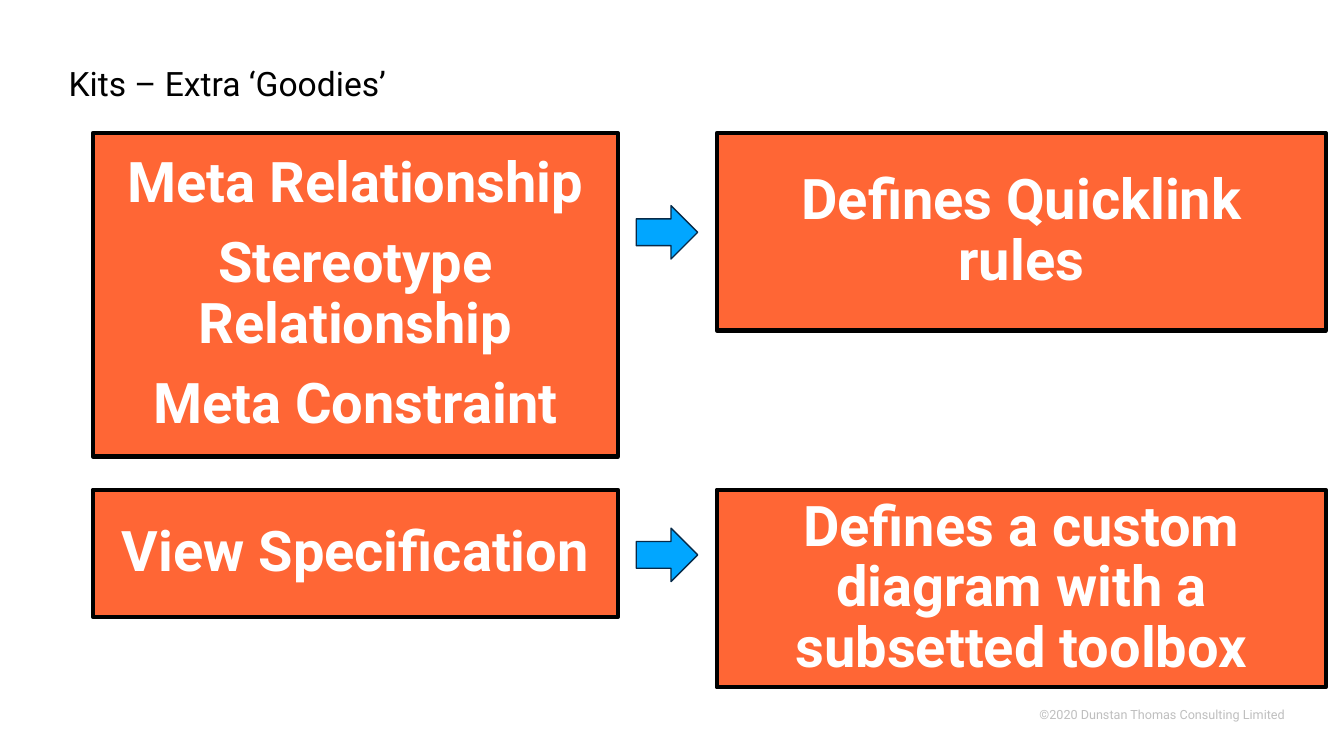
from pptx import Presentation
from pptx.dml.color import RGBColor
from pptx.enum.shapes import MSO_SHAPE
from pptx.enum.text import MSO_ANCHOR, MSO_AUTO_SIZE, PP_ALIGN
from pptx.util import Inches, Pt

RECTANGLE, RIGHT_ARROW = MSO_SHAPE.RECTANGLE, MSO_SHAPE.RIGHT_ARROW
LEFT, CENTER, RIGHT = PP_ALIGN.LEFT, PP_ALIGN.CENTER, PP_ALIGN.RIGHT
TOP, MIDDLE = MSO_ANCHOR.TOP, MSO_ANCHOR.MIDDLE
NO_AUTOFIT = MSO_AUTO_SIZE.NONE

TERM_LEFT, TERM_WIDTH = 0.92, 5.21
ARROW_LEFT, ARROW_WIDTH, ARROW_HEIGHT = 6.31, 0.61, 0.53
MEANING_LEFT, MEANING_WIDTH, MEANING_HEIGHT = 7.11, 6.04, 1.96
BOX_INSET = 0.19

# Row top, term box height, arrow top, terms, meaning
ROWS = [
    (1.32, 3.21, 2.04,
     ["Meta Relationship", "Stereotype Relationship", "Meta Constraint"],
     "Defines Quicklink rules"),
    (4.86, 1.26, 5.24,
     ["View Specification"],
     "Defines a custom diagram with a subsetted toolbox"),
]


def write(paragraph, text, size, color, align, bold=False):
    paragraph.alignment = align
    run = paragraph.add_run()
    run.text = text
    run.font.name = "Roboto"
    run.font.size = Pt(size)
    run.font.bold = bold
    run.font.color.rgb = RGBColor.from_string(color)


def add_filled_shape(kind, left, top, width, height, fill, line, line_width):
    shape = slide.shapes.add_shape(
        kind, Inches(left), Inches(top), Inches(width), Inches(height))
    shape.shadow.inherit = False
    shape.fill.solid()
    shape.fill.fore_color.rgb = RGBColor.from_string(fill)
    shape.line.color.rgb = RGBColor.from_string(line)
    shape.line.width = Pt(line_width)
    return shape


presentation = Presentation()
presentation.slide_width = Inches(13.33)
presentation.slide_height = Inches(7.5)
slide = presentation.slides.add_slide(presentation.slide_layouts[5])

# Copyright line
footer = slide.shapes.add_textbox(
    Inches(7.75), Inches(6.96), Inches(4.99), Inches(0.25))
footer_frame = footer.text_frame
footer_frame.word_wrap = True
footer_frame.margin_left = footer_frame.margin_right = 0
write(footer_frame.paragraphs[0], "©2020 Dunstan Thomas Consulting Limited",
      9, "BFBFBF", RIGHT)

# Title
title = slide.shapes.title
title.left, title.top = Inches(0.58), Inches(0.62)
title.width, title.height = Inches(12.06), Inches(0.51)
title.text_frame.auto_size = NO_AUTOFIT
title.text_frame.vertical_anchor = TOP
title_paragraph = title.text_frame.paragraphs[0]
title_paragraph.line_spacing = 0.9
write(title_paragraph, "Kits – Extra ‘Goodies’", 24, "000000", LEFT)

# Each row: terms, arrow, meaning
for top, term_height, arrow_top, terms, meaning in ROWS:
    boxes = [
        (TERM_LEFT, TERM_WIDTH, term_height, terms),
        (MEANING_LEFT, MEANING_WIDTH, MEANING_HEIGHT, [meaning]),
    ]
    for left, width, height, lines in boxes:
        box = add_filled_shape(
            RECTANGLE, left, top, width, height, "FF6635", "000000", 3)
        frame = box.text_frame
        frame.word_wrap = True
        frame.vertical_anchor = MIDDLE
        frame.margin_left = frame.margin_right = Inches(BOX_INSET)
        frame.margin_top = frame.margin_bottom = Inches(BOX_INSET)
        for index, line in enumerate(lines):
            paragraph = frame.add_paragraph() if index else frame.paragraphs[0]
            paragraph.line_spacing = 0.9
            paragraph.space_after = Pt(14)
            write(paragraph, line, 40, "FFFFFF", CENTER, bold=True)
    add_filled_shape(RIGHT_ARROW, ARROW_LEFT, arrow_top, ARROW_WIDTH,
                     ARROW_HEIGHT, "01A6FF", "072A48", 1)

presentation.save("out.pptx")
